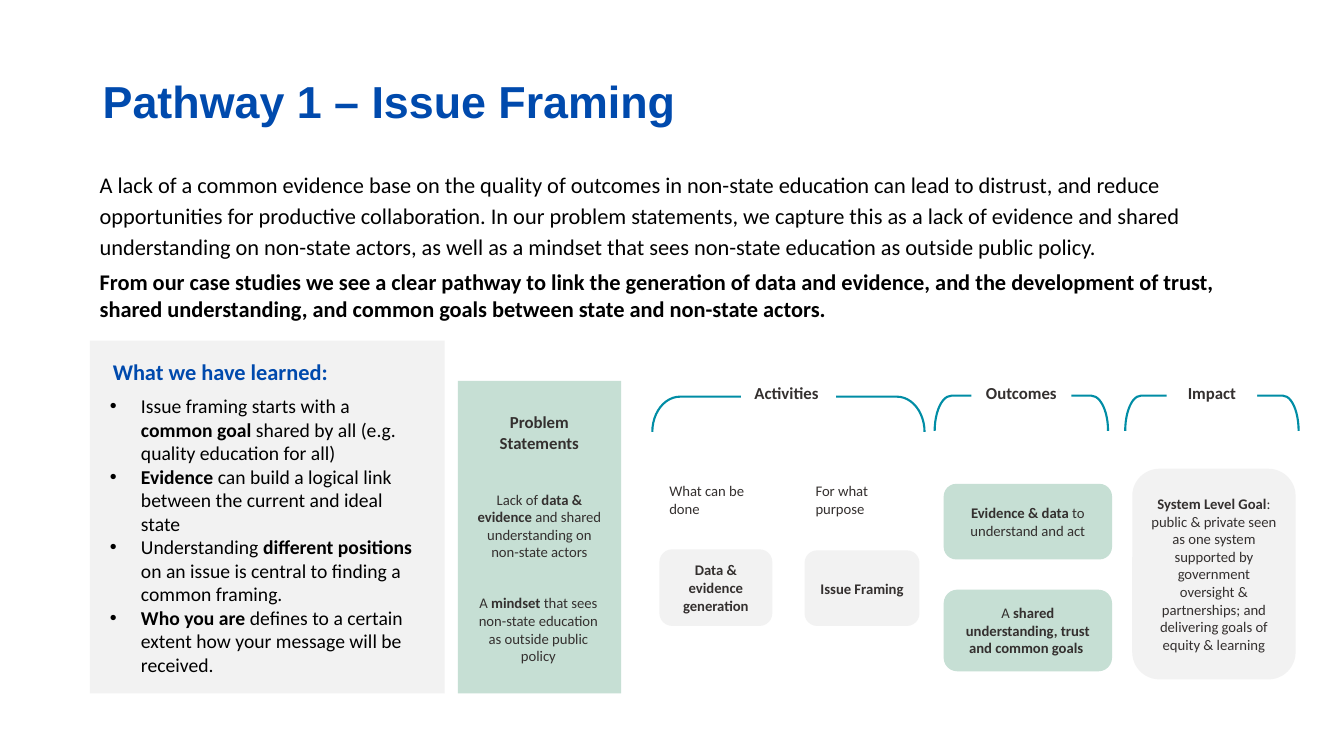
from pptx import Presentation
from pptx.dml.color import RGBColor
from pptx.enum.shapes import MSO_SHAPE
from pptx.enum.text import MSO_ANCHOR, PP_ALIGN
from pptx.util import Inches, Pt
from lxml import etree

RECT, ROUND = MSO_SHAPE.RECTANGLE, MSO_SHAPE.ROUNDED_RECTANGLE
BRACKET = MSO_SHAPE.RIGHT_BRACKET
TOP, MIDDLE = MSO_ANCHOR.TOP, MSO_ANCHOR.MIDDLE
LEFT, CENTER = PP_ALIGN.LEFT, PP_ALIGN.CENTER


class Theme:
    body, head = "Calibri", "Arial"
    blue, teal, green = "004AAD", "008DA5", "C6DFD4"
    gray, white, ink, black = "F2F2F2", "FFFFFF", "34302F", "000000"
    title, lead, list, label, small = 32, 16, 14, 12, 10.5


# Asterisks enclose bold words; boxes are left, top, width, height in inches.
TITLE = "Pathway 1 – Issue Framing"
INTRO = (
    "A lack of a common evidence base on the quality of outcomes in non-state "
    "education can lead to distrust, and reduce opportunities for productive "
    "collaboration. In our problem statements, we capture this as a lack of "
    "evidence and shared understanding on non-state actors, as well as a mindset "
    "that sees non-state education as outside public policy."
)
CLAIM = (
    "From our case studies we see a clear pathway to link the generation of data "
    "and evidence, and the development of trust, shared understanding, and common "
    "goals between state and non-state actors."
)
LEARNED = "What we have learned:"
LESSONS = [
    "Issue framing starts with a *common goal *shared by all (e.g. quality education for all)",
    "*Evidence *can build a logical link between the current and ideal state",
    "Understanding *different positions *on an issue is central to finding a common framing.",
    "*Who you are *defines to a certain extent how your message will be received.",
]
PANELS = [
    ((4.54, 3.78, 1.62, 3.1), Theme.green),
    ((0.89, 3.38, 3.52, 3.5), Theme.gray),
]
CARDS = [
    ((11.23, 4.65, 1.62, 2.09), Theme.gray,
     "*System Level Goal*: public & private seen as one system supported by "
     "government oversight & partnerships; and delivering goals of equity & learning"),
    ((9.36, 4.8, 1.67, 0.75), Theme.green, "*Evidence & data *to understand and act"),
    ((9.36, 5.85, 1.67, 0.81), Theme.green,
     "A *shared understanding, trust and common goals *"),
    ((4.59, 4.79, 1.52, 0.85), None,
     "Lack of *data & evidence* and shared understanding on non-state actors"),
    ((4.58, 5.85, 1.52, 0.79), None,
     "A *mindset* that sees non-state education as outside public policy"),
    ((6.54, 5.45, 1.12, 0.76), Theme.gray, "*Data & evidence generation*"),
    ((7.98, 5.46, 1.14, 0.75), Theme.gray, "*Issue Framing*"),
]
HINTS = [(6.54, "What can be done"), (7.99, "For what purpose")]
# Heading, centre, bracket span, label width, corner, bracket middle
STAGES = [
    ("Activities ", 7.82, 2.7, 0.94, 0.785, 4.11),
    ("Outcomes", 10.13, 1.72, 0.99, 0.475, 4.1),
    ("Impact", 12.02, 1.72, 0.9, 0.445, 4.1),
]
DEPTH, LABEL_TOP, LABEL_HIGH = 0.35, 3.75, 0.35

deck = Presentation()
deck.slide_width, deck.slide_height = Inches(13.33), Inches(7.5)
slide = deck.slides.add_slide(deck.slide_layouts[6])


def color(code):
    return RGBColor.from_string(code)


def draw(kind, box, fill=None, line=None):
    shape = slide.shapes.add_shape(kind, *map(Inches, box))
    shape.shadow.inherit = False
    if fill:
        shape.fill.solid()
        shape.fill.fore_color.rgb = color(fill)
    else:
        shape.fill.background()
    if line:
        shape.line.color.rgb = color(line)
        shape.line.width = Pt(1.5)
    else:
        shape.line.fill.background()
    return shape


def write(shape, lines, size, ink=Theme.ink, face=Theme.body, bold=False,
          align=LEFT, anchor=TOP):
    """Fill a shape with one paragraph a line, and return the paragraphs."""
    frame = shape.text_frame
    frame.word_wrap = True
    frame.vertical_anchor = anchor
    for i, line in enumerate(lines):
        para = frame.add_paragraph() if i else frame.paragraphs[0]
        para.alignment = align
        font = para.font
        font.name, font.size, font.bold = face, Pt(size), bold
        font.color.rgb = color(ink)
        for j, part in enumerate(line.split("*")):
            if part:
                run = para.add_run()
                run.text = part
                if j % 2:
                    run.font.bold = True
    return frame.paragraphs


def text(box, lines, size, **look):
    return write(slide.shapes.add_textbox(*map(Inches, box)), lines, size, **look)


def bullet(para):
    props = para._p.get_or_add_pPr()
    props.set("marL", str(Inches(0.31)))
    props.set("indent", str(-Inches(0.31)))
    space = "http://schemas.openxmlformats.org/drawingml/2006/main"
    font = etree.Element(f"{{{space}}}buFont", typeface=Theme.head)
    mark = etree.Element(f"{{{space}}}buChar", char="•")
    props.insert(0, font)
    props.insert(1, mark)


for box, fill in PANELS:
    draw(RECT, box, fill)

for box, fill, words in CARDS:
    write(draw(ROUND, box, fill), [words], Theme.small, align=CENTER, anchor=MIDDLE)

text((4.63, 4.04, 1.44, 0.58), ["Problem Statements"], Theme.label,
     bold=True, align=CENTER)

for name, center, span, wide, corner, middle in STAGES:
    arch = draw(BRACKET, (center - DEPTH / 2, middle - span / 2, DEPTH, span),
                line=Theme.teal)
    arch.rotation = 270
    arch.adjustments[0] = corner
    label = draw(RECT, (center - wide / 2, LABEL_TOP, wide, LABEL_HIGH), Theme.white)
    write(label, [name], Theme.label, bold=True, align=CENTER)

for left, words in HINTS:
    text((left, 4.73, 1.05, 0.54), [words], Theme.small)

intro, claim = text((0.89, 1.61, 11.84, 1.65), [INTRO, CLAIM], Theme.lead,
                    ink=Theme.black)
intro.line_spacing = 1.15
intro.space_before = intro.space_after = Pt(6)
claim.font.bold = True

text((0.92, 0.4, 6.79, 1.26), [TITLE], Theme.title, ink=Theme.blue,
     face=Theme.head, bold=True, anchor=MIDDLE)[0].line_spacing = 0.9

for para in text((0.99, 3.86, 3.22, 2.93), LESSONS, Theme.list, ink=Theme.black):
    bullet(para)
text((1.02, 3.5, 2.42, 0.37), [LEARNED], Theme.lead, ink=Theme.blue, bold=True)

deck.save("out.pptx")
